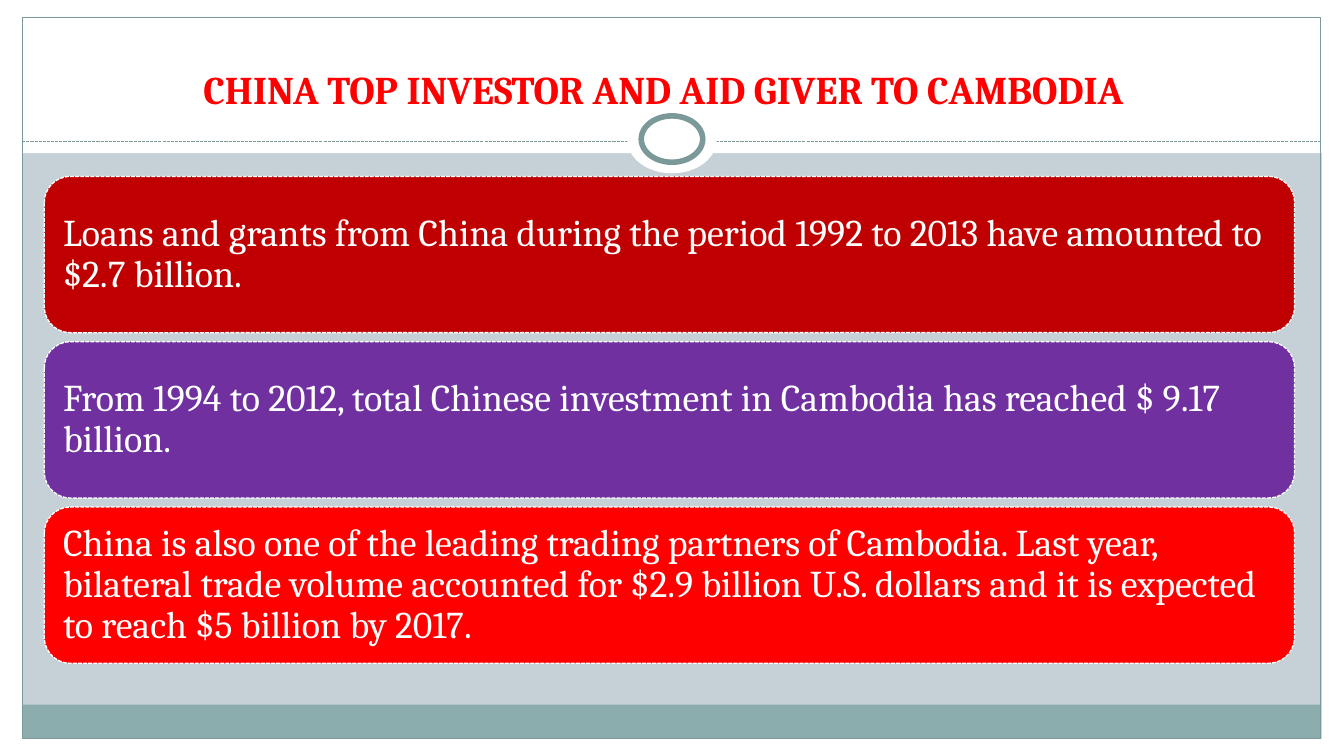
from pptx import Presentation
from pptx.dml.color import RGBColor as RGB
from pptx.enum.dml import MSO_LINE as Dash
from pptx.enum.shapes import MSO_CONNECTOR as Conn, MSO_SHAPE as Kind
from pptx.enum.text import MSO_ANCHOR as Anchor, PP_ALIGN as Align
from pptx.oxml.ns import qn
from pptx.util import Inches, Pt
from lxml import etree

WHITE = RGB(0xFF, 0xFF, 0xFF)
MIST = RGB(0xC5, 0xD1, 0xD7)
TEAL = RGB(0x8C, 0xAD, 0xAE)
SLATE = RGB(0x7C, 0x99, 0x9A)
CRIMSON = RGB(0xC0, 0x00, 0x00)
PURPLE = RGB(0x70, 0x30, 0xA0)
RED = RGB(0xFF, 0x00, 0x00)

WIDE, HIGH = 13.33, 7.5
EDGE, FOOT = 0.22, 0.17
INNER = 12.88

TITLE = "CHINA TOP INVESTOR AND AID GIVER TO CAMBODIA "
FACTS = [
    (CRIMSON, "Loans and grants from China during the period 1992 to 2013 "
              "have amounted to $2.7 billion."),
    (PURPLE, "From 1994 to 2012, total Chinese investment in Cambodia "
             "has reached $ 9.17 billion."),
    (RED, "China is also one of the leading trading partners of Cambodia. "
          "Last year, bilateral trade volume accounted for $2.9 billion U.S. "
          "dollars and it is expected to reach $5 billion by 2017."),
]
CARD_TOP, CARD_STEP = 1.75, 1.64

TITLE_FONT = {"name": "Cambria", "size": Pt(28), "bold": True}
FACT_FONT = {"name": "Cambria", "size": Pt(27), "bold": False}
TITLE_FRAME = {"word_wrap": True, "vertical_anchor": Anchor.BOTTOM}
FACT_FRAME = {"word_wrap": True, "vertical_anchor": Anchor.MIDDLE}
FACT_FRAME.update({f"margin_{side}": Inches(0.11)
                   for side in ("left", "top", "right", "bottom")})


def assign(item, values):
    for name, value in values.items():
        setattr(item, name, value)


def set_line(line, color, width, dash=None):
    line.color.rgb = color
    line.width = Pt(width)
    if dash:
        line.dash_style = dash


def add_shape(slide, kind, box, fill=None, line=None):
    """Draw a preset shape; line holds colour, width and optional dash."""
    shape = slide.shapes.add_shape(kind, *map(Inches, box))
    shape.shadow.inherit = False
    if fill is None:
        shape.fill.background()
    else:
        shape.fill.solid()
        shape.fill.fore_color.rgb = fill
    if line is None:
        shape.line.fill.background()
    else:
        set_line(shape.line, *line)
    return shape


def add_rule(slide, left, right, top):
    rule = slide.shapes.add_connector(
        Conn.STRAIGHT, Inches(left), Inches(top), Inches(right), Inches(top))
    set_line(rule.line, SLATE, 0.75, Dash.SQUARE_DOT)
    etree.SubElement(rule._element.spPr, qn("a:effectLst"))


def write(shape, text, frame, font, color, para):
    assign(shape.text_frame, frame)
    first = shape.text_frame.paragraphs[0]
    assign(first, para)
    run = first.add_run()
    run.text = text
    assign(run.font, font)
    run.font.color.rgb = color


def add_decor(slide):
    bands = [
        ((0, HIGH - FOOT, WIDE, FOOT), WHITE),
        ((0, 0, WIDE, 1.52), WHITE),
        ((0, 0, EDGE, HIGH), WHITE),
        ((WIDE - EDGE, 0, EDGE, HIGH), WHITE),
        ((EDGE, 6.99, INNER, 0.34), TEAL),
    ]
    for box, fill in bands:
        add_shape(slide, Kind.RECTANGLE, box, fill)
    add_shape(slide, Kind.RECTANGLE, (EDGE, FOOT, INNER, HIGH - 2 * FOOT),
              line=(SLATE, 0.75))
    add_rule(slide, EDGE, EDGE + INNER, 1.4)
    add_shape(slide, Kind.OVAL, (6.22, 1.05, 0.89, 0.67), WHITE)
    add_shape(slide, Kind.OVAL, (6.36, 1.15, 0.61, 0.46), WHITE, (SLATE, 4))


def add_title(slide):
    box = slide.shapes.add_textbox(*map(Inches, (0.4, 0.33, 12.44, 0.83)))
    write(box, TITLE, TITLE_FRAME, TITLE_FONT, RED,
          {"alignment": Align.CENTER})


def add_card(slide, top, fill, text):
    card = add_shape(slide, Kind.ROUNDED_RECTANGLE, (0.44, top, 12.4, 1.55),
                     fill, (WHITE, 0.9, Dash.SQUARE_DOT))
    write(card, text, FACT_FRAME, FACT_FONT, WHITE,
          {"alignment": Align.LEFT, "line_spacing": 0.9})


def main():
    deck = Presentation()
    deck.slide_width, deck.slide_height = Inches(WIDE), Inches(HIGH)
    slide = deck.slides.add_slide(deck.slide_layouts[6])
    back = slide.background.fill
    back.solid()
    back.fore_color.rgb = MIST
    add_decor(slide)
    add_title(slide)
    for row, (fill, text) in enumerate(FACTS):
        add_card(slide, CARD_TOP + row * CARD_STEP, fill, text)
    deck.save("out.pptx")


if __name__ == "__main__":
    main()
